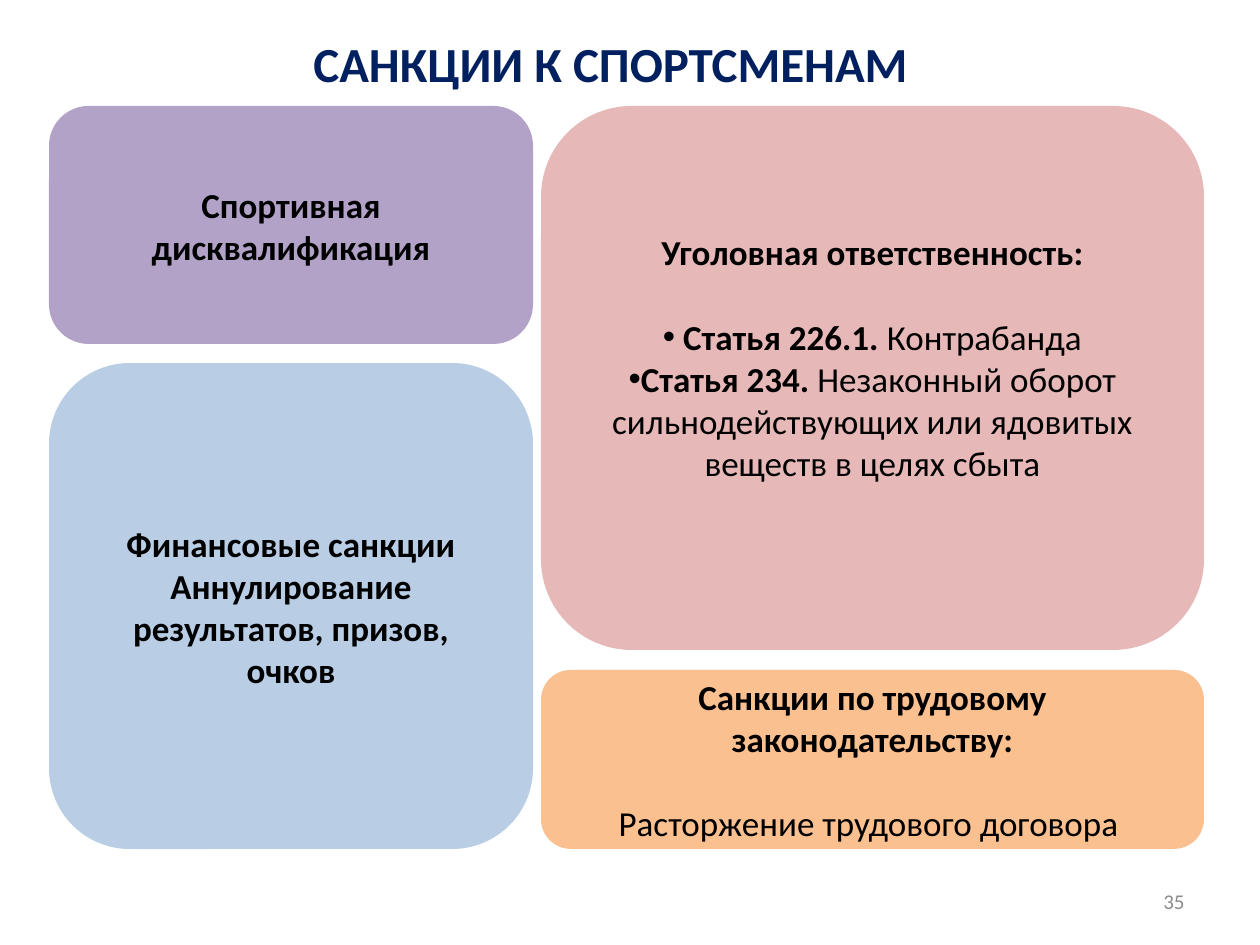
from lxml import etree
from pptx import Presentation
from pptx import util as u
from pptx.dml.color import RGBColor
from pptx.enum import shapes, text
from pptx.oxml.ns import qn

SCALE = 914400 / 126
ALIGN = text.PP_ALIGN


def px(n):
    return u.Emu(round(n * SCALE))


def color(code):
    return RGBColor.from_string(code)


def place(item, box):
    item.left, item.top, item.width, item.height = map(px, box)


def bullet(para):
    props = para._p.get_or_add_pPr()
    props.set("marL", "0")
    props.set("indent", "0")
    etree.SubElement(props, qn("a:buFont")).set("typeface", "Arial")
    etree.SubElement(props, qn("a:buChar")).set("char", "•")


def write(frame, paras, size=20, ink="000000", align=ALIGN.CENTER, gap=0):
    frame.word_wrap = True
    frame.vertical_anchor = text.MSO_ANCHOR.MIDDLE
    for i, (runs, dot) in enumerate(paras):
        para = frame.paragraphs[0] if i == 0 else frame.add_paragraph()
        para.alignment = align
        if i == 0 and gap:
            para.space_after = u.Pt(gap)
        if dot:
            bullet(para)
        for words, bold in runs:
            run = para.add_run()
            run.text = words
            font = run.font
            font.name, font.size, font.bold = "Calibri", u.Pt(size), bold
            font.color.rgb = color(ink)


def card(slide, box, fill, paras, gap=0, base=6):
    item = slide.shapes.add_shape(
        shapes.MSO_SHAPE.ROUNDED_RECTANGLE, *map(px, box))
    item.shadow.inherit = False
    item.fill.solid()
    item.fill.fore_color.rgb = color(fill)
    item.line.fill.background()
    item.text_frame.margin_bottom = px(base)
    write(item.text_frame, paras, gap=gap)


def main():
    deck = Presentation()
    deck.slide_width, deck.slide_height = u.Inches(10), u.Inches(7.5)
    slide = deck.slides.add_slide(deck.slide_layouts[5])

    title = slide.shapes.title
    place(title, (233, 20, 755, 86))
    write(title.text_frame, [([("САНКЦИИ К СПОРТСМЕНАМ", True)], False)],
          size=28, ink="002060")

    left, right = (49, 484), (541, 663)
    top, end = 106, 849
    cards = [
        (left, top, 344, "B3A2C7",
         [([("Спортивная дисквалификация", True)], False)], 0, 6),
        (right, top, 650, "E6B9B8",
         [([("Уголовная ответственность:", True)], False),
          ([(" ", False), ("Статья 226.1. ", True), ("Контрабанда", False)],
           True),
          ([("Статья 234. ", True),
            ("Незаконный оборот сильнодействующих или ядовитых веществ "
             "в целях сбыта", False)], True)], 24, 48),
        (left, 363, end, "B9CDE5",
         [([("Финансовые санкции", True)], False),
          ([("Аннулирование результатов, призов, очков", True)], False)],
         0, 6),
        (right, 670, end, "FAC090",
         [([("Санкции по трудовому законодательству:", True)], False),
          ([("Расторжение трудового договора ", False)], False)], 24, 6),
    ]
    for (x, wide), y, foot, fill, paras, gap, base in cards:
        card(slide, (x, y, wide, foot - y), fill, paras, gap, base)

    number = slide.shapes.add_textbox(*map(px, (903, 876, 294, 50)))
    write(number.text_frame, [([("35", False)], False)],
          size=12, ink="8C8C8C", align=ALIGN.RIGHT)
    deck.save("out.pptx")


if __name__ == "__main__":
    main()
